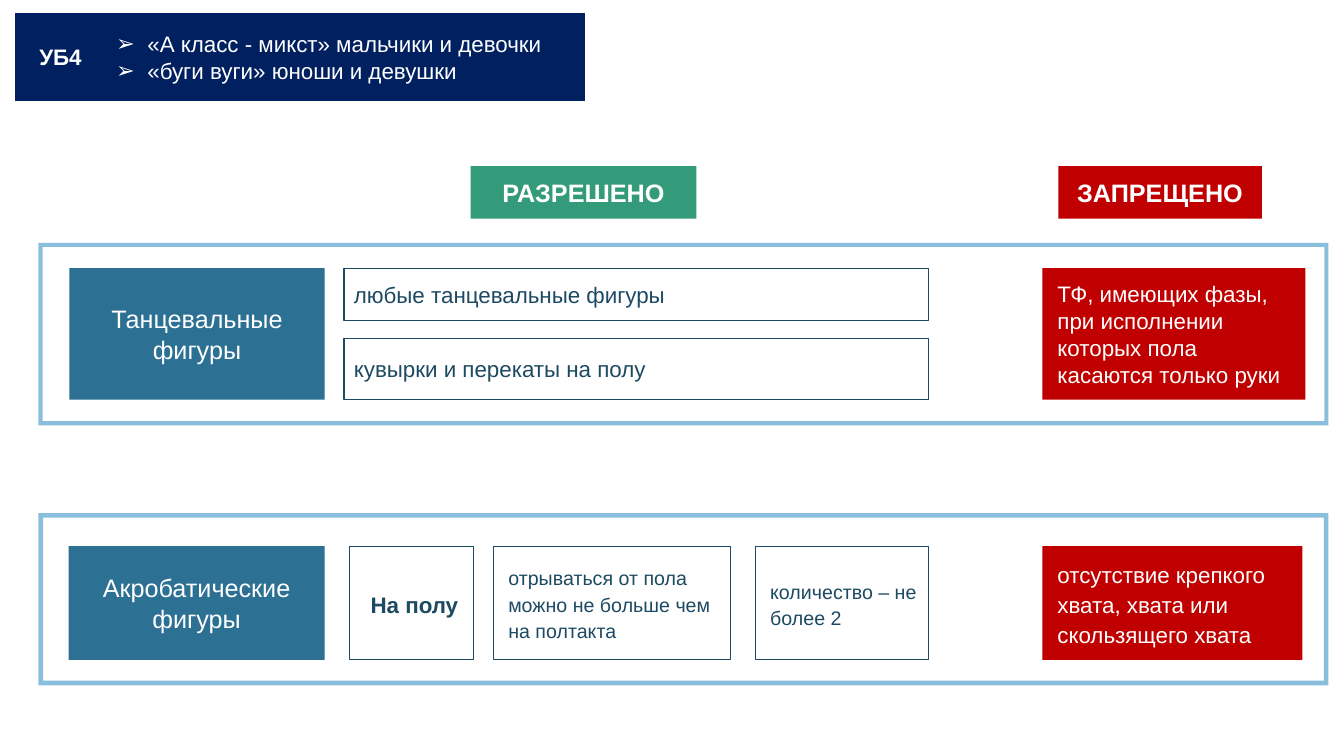
from lxml import etree
from pptx import Presentation
from pptx.dml.color import RGBColor
from pptx.enum.shapes import MSO_SHAPE
from pptx.enum.text import MSO_ANCHOR, MSO_AUTO_SIZE, PP_ALIGN
from pptx.oxml.ns import qn
from pptx.util import Cm, Pt

RECTANGLE, FRAME = MSO_SHAPE.RECTANGLE, MSO_SHAPE.FRAME
MIDDLE = MSO_ANCHOR.MIDDLE
NO_AUTOFIT = MSO_AUTO_SIZE.NONE
LEFT, CENTER = PP_ALIGN.LEFT, PP_ALIGN.CENTER

FONT = "Arial"
WHITE = "FFFFFF"
NAVY = "002060"
INK = "1D4A62"
BLUE = "2C7093"
PALE_BLUE = "89BFDC"
GREEN = "349B7A"
RED = "C00000"

FORBIDDEN_LEFT = 25.3


def color(hex_string):
    return RGBColor.from_string(hex_string)


def place(shape, box):
    shape.left, shape.top, shape.width, shape.height = (Cm(length) for length in box)


def paint(shape, fill):
    shape.fill.solid()
    shape.fill.fore_color.rgb = color(fill)
    shape.line.fill.background()


def write(shape, lines, size, text_color, bold=False, align=LEFT,
          indent=0, line_spacing=1.0, space_after=0, bullet=None):
    """Fill a shape with one paragraph per line; indent is in centimetres."""
    frame = shape.text_frame
    frame.word_wrap = True
    frame.auto_size = NO_AUTOFIT
    frame.vertical_anchor = MIDDLE
    for index, line in enumerate(lines):
        paragraph = frame.add_paragraph() if index else frame.paragraphs[0]
        paragraph.alignment = align
        paragraph.line_spacing = line_spacing
        paragraph.space_before = Pt(0)
        paragraph.space_after = Pt(space_after)
        properties = paragraph._p.get_or_add_pPr()
        properties.set("marL", str(Cm(indent)))
        properties.set("indent", str(-Cm(indent) if bullet else 0))
        if bullet:
            etree.SubElement(properties, qn("a:buFont"), typeface=FONT)
            etree.SubElement(properties, qn("a:buChar"), char=bullet)
        run = paragraph.add_run()
        run.text = line
        run.font.name = FONT
        run.font.size = Pt(size)
        run.font.bold = bold
        run.font.color.rgb = color(text_color)


def add_box(slide, box, shape_type=RECTANGLE, fill=None):
    """Add a filled shape, or a thinly outlined one when no fill is given."""
    shape = slide.shapes.add_shape(shape_type, *(Cm(length) for length in box))
    shape.shadow.inherit = False
    if fill:
        paint(shape, fill)
    else:
        shape.fill.background()
        shape.line.color.rgb = color(INK)
        shape.line.width = Pt(0.75)
    return shape


def add_header(slide, box):
    left, top, width, height = box
    code_width = 2.29
    title, body = slide.shapes.title, slide.placeholders[1]
    place(title, (left, top, code_width, height))
    place(body, (left + code_width, top, width - code_width, height))
    for placeholder in (title, body):
        paint(placeholder, NAVY)
    write(title, ["УБ4"], 16, WHITE, bold=True, align=CENTER)
    write(body, ["«А класс - микст» мальчики и девочки",
                 "«буги вуги» юноши и девушки"],
          16, WHITE, indent=0.79, bullet="➢")


def add_verdict(slide, box, text, fill):
    write(add_box(slide, box, fill=fill), [text], 18, WHITE, bold=True, align=CENTER)


def add_section(slide, box, thickness, category, category_box):
    """Draw the section's frame and its category label, placed within the frame."""
    left, top = box[:2]
    border = add_box(slide, box, FRAME, PALE_BLUE)
    border.adjustments[0] = thickness
    x, y, width, height = category_box
    label = add_box(slide, (left + x, top + y, width, height), fill=BLUE)
    write(label, [category], 18, WHITE, align=CENTER)


def add_dance_section(slide, box):
    left, top = box[:2]
    row_top, row_height = 0.64, 3.31
    add_section(slide, box, 0.023, "Танцевальные фигуры",
                (0.78, row_top, 6.43, row_height))
    for text, offset, height in (
        ("любые танцевальные фигуры", row_top, 1.33),
        ("кувырки и перекаты на полу", 2.4, 1.55),
    ):
        allowed = add_box(slide, (left + 7.7, top + offset, 14.73, height))
        write(allowed, [text], 16, INK)
    forbidden = add_box(slide, (left + FORBIDDEN_LEFT, top + row_top, 6.63, row_height),
                        fill=RED)
    write(forbidden, ["ТФ, имеющих фазы, при исполнении которых пола касаются только руки"],
          16, WHITE, indent=0.13)


def add_acrobatic_section(slide, box):
    left, top = box[:2]
    row_top, row_height = 0.83, 2.87
    add_section(slide, box, 0.027, "Акробатические фигуры",
                (0.76, row_top, 6.45, row_height))
    for text, x, width, size, text_color, fill, bold, align in (
        ("На полу", 7.85, 3.12, 16, INK, None, True, CENTER),
        ("отрываться от пола можно не больше чем на полтакта",
         11.46, 5.99, 14, INK, None, False, LEFT),
        ("количество – не более 2", 18.06, 4.37, 14, INK, None, False, LEFT),
        ("отсутствие крепкого хвата, хвата или скользящего хвата",
         FORBIDDEN_LEFT, 6.55, 16, WHITE, RED, False, LEFT),
    ):
        rule = add_box(slide, (left + x, top + row_top, width, row_height), fill=fill)
        write(rule, [text], size, text_color, bold, align,
              indent=0.13, line_spacing=1.12, space_after=0.5)


def main():
    presentation = Presentation()
    presentation.slide_width, presentation.slide_height = Cm(33.87), Cm(19.05)
    slide = presentation.slides.add_slide(presentation.slide_layouts[1])
    add_header(slide, (0.38, 0.33, 14.36, 2.21))
    add_verdict(slide, (11.86, 4.19, 5.69, 1.32), "РАЗРЕШЕНО", GREEN)
    add_verdict(slide, (26.67, 4.19, 5.13, 1.32), "ЗАПРЕЩЕНО", RED)
    add_dance_section(slide, (0.97, 6.12, 32.51, 4.6))
    add_acrobatic_section(slide, (0.97, 12.93, 32.51, 4.34))
    presentation.save("out.pptx")


if __name__ == "__main__":
    main()
